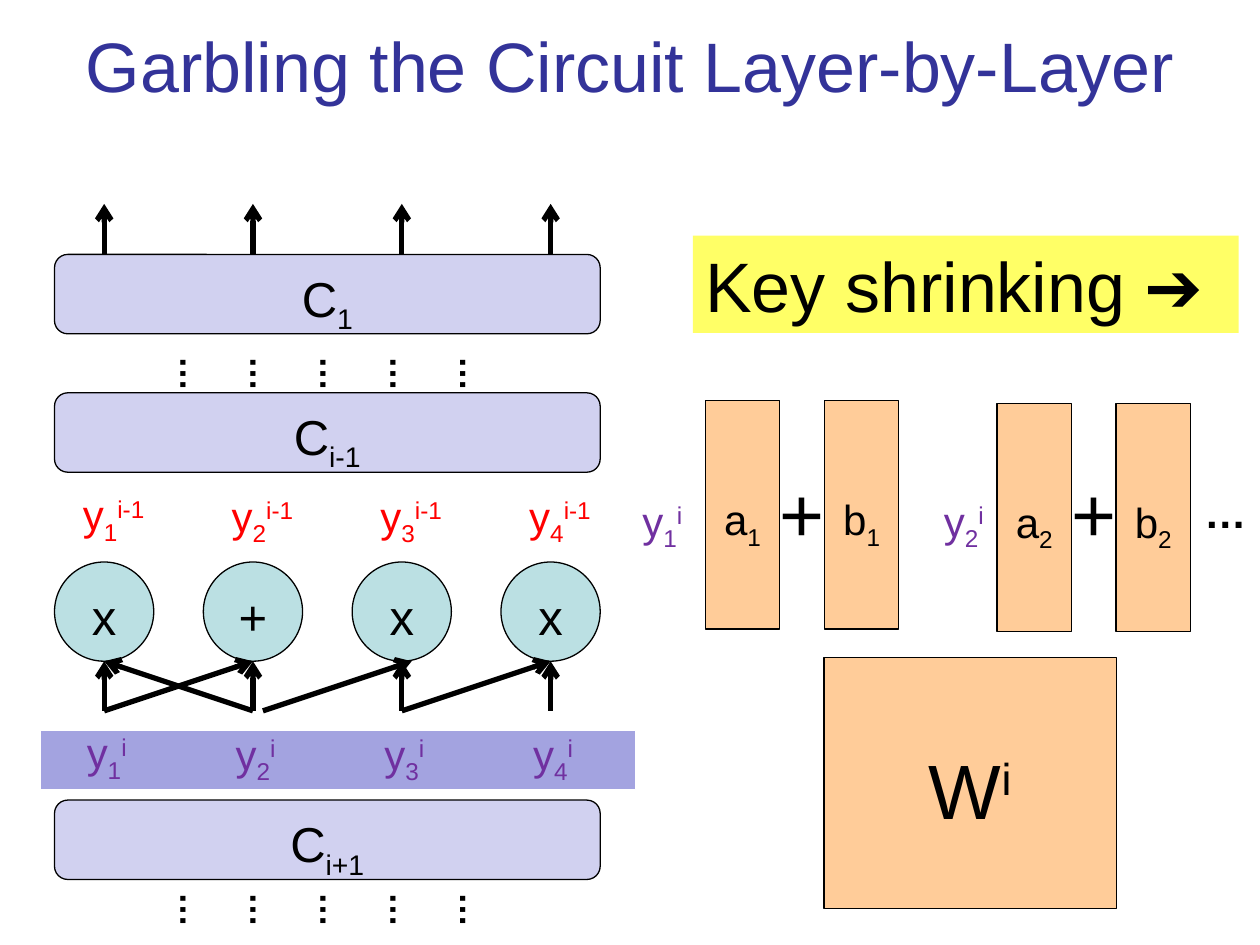
from lxml.etree import SubElement
from pptx import Presentation
from pptx.dml.color import RGBColor
from pptx.enum.shapes import MSO_CONNECTOR as Link, MSO_SHAPE as Kind
from pptx.enum.text import MSO_ANCHOR as Anchor, MSO_AUTO_SIZE as Fit, PP_ALIGN as Align
from pptx.oxml.ns import qn
from pptx.util import Cm, Pt

HUES = {
    "title": "333399", "ink": "000000", "old": "FF0000", "key": "7030A0",
    "band": "A3A3E0", "layer": "D1D1F0", "gate": "BBE0E3",
    "table": "FFCC99", "note": "FFFF66", "paper": "FFFFFF",
}
STEP = 3  # distance between wires, in cm


def hue(name):
    return RGBColor.from_string(HUES[name])


def write(frame, size, text, sub="", sup="", color="ink", bold=False, align=Align.LEFT):
    """Write text with an optional subscript and superscript."""
    par = frame.paragraphs[0]
    par.alignment = align
    font = par.font
    font.name, font.size, font.bold = "Arial", Pt(size), bold
    font.color.rgb = hue(color)
    for part, base in ((text, 0), (sub, -25000), (sup, 30000)):
        if part:
            run = par.add_run()
            run.text = part
            if base:
                run._r.get_or_add_rPr().set("baseline", str(base))


def label(slide, x, y, w, h, size, text, vert=False, **style):
    box = slide.shapes.add_textbox(Cm(x), Cm(y), Cm(w), Cm(h))
    frame = box.text_frame
    frame.word_wrap = False
    frame.auto_size = Fit.SHAPE_TO_FIT_TEXT
    if vert:
        box.element.txBody.bodyPr.set("vert", "vert")
    write(frame, size, text, **style)


def block(slide, kind, x, y, w, h, fill, line="ink"):
    form = slide.shapes.add_shape(kind, Cm(x), Cm(y), Cm(w), Cm(h))
    form.shadow.inherit = False
    form.fill.solid()
    form.fill.fore_color.rgb = hue(fill)
    if line:
        form.line.color.rgb = hue(line)
        form.line.width = Pt(0.75)
    else:
        form.line.fill.background()
    return form


def cell(slide, kind, x, y, w, h, fill, top, size, text, **style):
    """A filled shape whose centred text starts at a given inset."""
    frame = block(slide, kind, x, y, w, h, fill).text_frame
    frame.vertical_anchor = Anchor.TOP
    frame.margin_top = Cm(top)
    write(frame, size, text, align=Align.CENTER, **style)


def arrow(slide, x1, y1, x2, y2):
    link = slide.shapes.add_connector(Link.STRAIGHT, Cm(x1), Cm(y1), Cm(x2), Cm(y2))
    link.line.color.rgb = hue("ink")
    link.line.width = Pt(3)
    SubElement(link.line._get_or_add_ln(), qn("a:tailEnd"), type="arrow")
    SubElement(link.element.spPr, qn("a:effectLst"))


def layer(slide, x, y, sub):
    cell(slide, Kind.ROUNDED_RECTANGLE, x, y, 11, 1.6, "layer", 0.2, 28, "C", sub=sub)


def dots(slide, x, y):
    for i in range(5):
        label(slide, x + 1.41 * i, y, 1.37, 0.97, 20, "…", vert=True, bold=True)


def circuit(slide, x, y):
    """Layers, gates and wires, from the outputs down."""
    block(slide, Kind.RECTANGLE, x - 0.29, y + 10.62, 12, 1.19, "band", "paper")
    wires = [x + 1 + STEP * i for i in range(4)]

    # Gates with their output and input keys
    for i, (mid, sign) in enumerate(zip(wires, "x+xx")):
        num = str(i + 1)
        drop = 0.03 if i else 0
        cell(slide, Kind.OVAL, mid - 1, y + 7.22, 2, 2, "gate", 0.2, 28, sign)
        label(slide, mid - 0.68, y + 5.62 + drop, 1.88, 1.27, 24, "y",
              sub=num, sup="i-1", color="old")
        label(slide, mid - 0.6, y + 10.42 + drop, 1.37, 1.27, 24, "y",
              sub=num, sup="i", color="key")
        arrow(slide, mid, y + 10.22, mid, y + 9.22)
        arrow(slide, mid, y + 1.02, mid, y)

    # Crossing wires: start, end, shift
    for a, b, shift in ((0, 1, 0), (1, 2, 0.2), (2, 3, 0), (1, 0, 0)):
        arrow(slide, wires[a] + shift, y + 10.22, wires[b] + shift, y + 9.22)

    # Layers
    for drop, sub in ((1.02, "1"), (3.81, "i-1"), (12.02, "i+1")):
        layer(slide, x, y + drop, sub)
    for drop in (2.82, 13.64):
        dots(slide, x + 2, y + drop)


def pair(slide, x, y, num, lead):
    """Columns a and b joined by a plus, with the key in front."""
    label(slide, x - lead, 9.86, 1.37, 1.27, 24, "y", sub=num, sup="i", color="key")
    label(slide, x + 1.25, 9.27, 1.42, 2.13, 44, "+")
    for i, name in enumerate("ab"):
        cell(slide, Kind.RECTANGLE, x + 2.4 * i, y, 1.5, 4.6, "table", 1.87, 24,
             name, sub=num)


def shrink(slide, x, y):
    """Key shrinking: the note, the column pairs and the matrix."""
    note = block(slide, Kind.RECTANGLE, x, y, 11, 1.96, "note", None)
    note.text_frame.word_wrap = False
    write(note.text_frame, 40, "Key shrinking ➔")
    pair(slide, x + 0.25, y + 3.33, "1", 1.52)
    pair(slide, x + 6.13, y + 3.38, "2", 1.32)
    label(slide, x + 10.06, y + 4.93, 1.37, 1.27, 24, "…", bold=True)
    cell(slide, Kind.RECTANGLE, x + 2.64, y + 8.51, 5.9, 5.05, "table", 1.7, 44,
         "W", sup="i")


def heading(slide, x, y, w, h):
    head = slide.shapes.title
    head.left, head.top, head.width, head.height = Cm(x), Cm(y), Cm(w), Cm(h)
    head.text_frame.auto_size = Fit.NONE
    head.text_frame.vertical_anchor = Anchor.MIDDLE
    write(head.text_frame, 40, "Garbling the Circuit Layer-by-Layer",
          color="title", align=Align.CENTER)


def main():
    deck = Presentation()
    deck.slide_width, deck.slide_height = Cm(25.4), Cm(19.05)
    slide = deck.slides.add_slide(deck.slide_layouts[5])
    heading(slide, 1.27, -0.28, 22.86, 3.18)
    circuit(slide, 1.1, 4.11)
    shrink(slide, 13.97, 4.75)
    deck.save("out.pptx")


if __name__ == "__main__":
    main()
